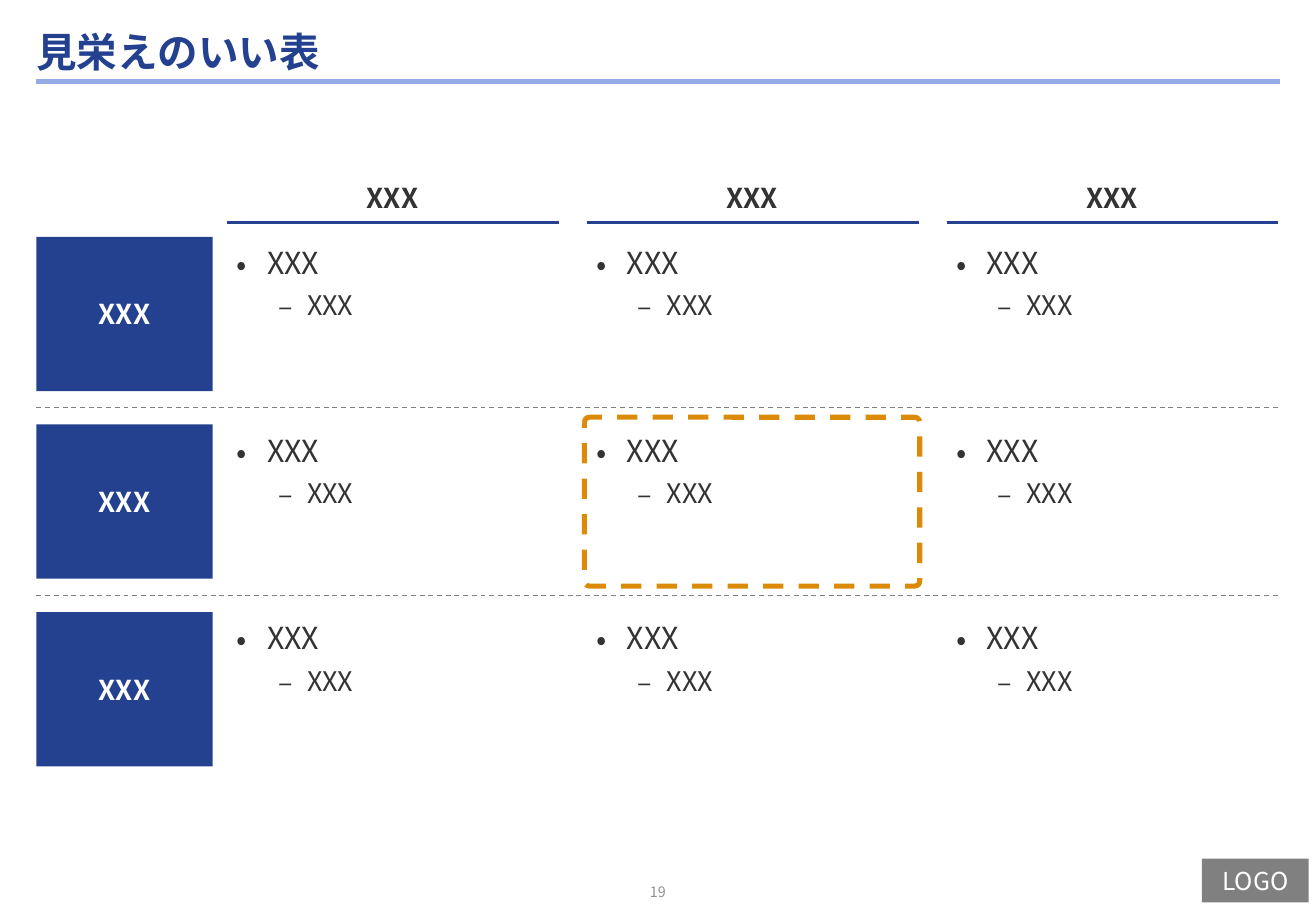
from dataclasses import dataclass

from lxml.etree import SubElement
from pptx import Presentation
from pptx.dml.color import RGBColor
from pptx.enum.dml import MSO_LINE as Dash
from pptx.enum.shapes import MSO_CONNECTOR as Connector, MSO_SHAPE as Shape
from pptx.enum.text import MSO_ANCHOR as Anchor, PP_ALIGN as Align
from pptx.oxml.ns import qn
from pptx.util import Inches, Pt


@dataclass(frozen=True)
class Theme:
    font: str = "Noto Sans CJK JP"
    navy: str = "244190"
    sky: str = "95ABE5"
    orange: str = "DB8B08"
    grey: str = "808080"
    pale: str = "909090"
    ink: str = "333333"
    white: str = "FFFFFF"
    title: float = 24
    label: float = 16.2
    item: float = 18
    subitem: float = 16
    logo: float = 14.6
    number: float = 8.5


THEME = Theme()
LEFT, RIGHT = 0.3, 10.53
COLUMN_LEFT, COLUMN_STEP, COLUMN_WIDTH = 1.85, 2.96, 2.76
ROW_TOP, ROW_STEP, ROW_HEIGHT = 1.95, 1.545, 1.27
HEADERS = ["XXX", "XXX", "XXX"]
ROWS = [("XXX", [("XXX", "XXX")] * 3)] * 3


def color(value):
    return RGBColor.from_string(value)


def inches(*lengths):
    return [Inches(length) for length in lengths]


def add_span(para, text, size, ink, bold=False):
    span = para.add_run()
    span.text = text
    span.font.name = THEME.font
    span.font.size = Pt(size)
    span.font.bold = bold
    span.font.color.rgb = color(ink)
    SubElement(span.font._element, qn("a:ea"), typeface=THEME.font)


def add_line(page, start, end, y, ink, width, dash=None):
    line = page.shapes.add_connector(Connector.STRAIGHT, *inches(start, y, end, y))
    line.line.color.rgb = color(ink)
    line.line.width = Pt(width)
    if dash:
        line.line.dash_style = dash
    SubElement(line._element.spPr, qn("a:effectLst"))


def add_block(page, place, text, fill, size, ink, bold=True, anchor=Anchor.MIDDLE):
    block = page.shapes.add_shape(Shape.RECTANGLE, *inches(*place))
    block.shadow.inherit = False
    block.fill.solid()
    block.fill.fore_color.rgb = color(fill)
    block.line.fill.background()
    block.text_frame.vertical_anchor = anchor
    para = block.text_frame.paragraphs[0]
    para.alignment = Align.CENTER
    add_span(para, text, size, ink, bold)


def add_header(page, left, text):
    add_block(page, (left, 1.44, COLUMN_WIDTH, 0.37), text,
              THEME.white, THEME.label, THEME.ink, anchor=Anchor.BOTTOM)
    add_line(page, left + 0.02, left + COLUMN_WIDTH - 0.01, 1.83, THEME.navy, 2)


def add_bullet(para, text, level, mark, margin, hanging, before, size):
    para.level = level
    para.space_before = Pt(before)
    properties = para._p.get_or_add_pPr()
    properties.set("marL", str(Inches(margin)))
    properties.set("indent", str(-Inches(hanging)))
    SubElement(properties, qn("a:buFont"), typeface=THEME.font)
    SubElement(properties, qn("a:buChar"), char=mark)
    add_span(para, text, size, THEME.ink)


def add_cell(page, left, top, item, subitem):
    box = page.shapes.add_textbox(*inches(left, top, COLUMN_WIDTH, 1.26))
    frame = box.text_frame
    frame.word_wrap = True
    add_bullet(frame.paragraphs[0], item, 0, "•", 0.25, 0.25, 10, THEME.item)
    add_bullet(frame.add_paragraph(), subitem, 1, "–", 0.58, 0.24, 5, THEME.subitem)


def add_highlight(page, left, top):
    frame = page.shapes.add_shape(Shape.ROUNDED_RECTANGLE,
                                  *inches(left, top, COLUMN_WIDTH, 1.39))
    frame.shadow.inherit = False
    frame.adjustments[0] = 0.03
    frame.fill.background()
    frame.line.color.rgb = color(THEME.orange)
    frame.line.width = Pt(3)
    frame.line.dash_style = Dash.DASH


def set_title(page, text):
    title = page.shapes.title
    title.left, title.top, title.width, title.height = inches(LEFT, 0.25, 10.24, 0.39)
    frame = title.text_frame
    frame.margin_left = frame.margin_top = frame.margin_bottom = 0
    frame.vertical_anchor = Anchor.MIDDLE
    para = frame.paragraphs[0]
    para.alignment = Align.LEFT
    para.line_spacing = 0.9
    add_span(para, text, THEME.title, THEME.navy, True)


def add_page_number(page, text):
    box = page.shapes.add_textbox(*inches(5.1, 7.24, 0.63, 0.21))
    frame = box.text_frame
    frame.word_wrap = True
    frame.margin_left = frame.margin_right = frame.margin_top = frame.margin_bottom = 0
    frame.vertical_anchor = Anchor.MIDDLE
    para = frame.paragraphs[0]
    para.alignment = Align.CENTER
    add_span(para, text, THEME.number, THEME.pale)


def main():
    deck = Presentation()
    deck.slide_width, deck.slide_height = inches(10.83, 7.5)
    page = deck.slides.add_slide(deck.slide_layouts[5])

    set_title(page, "見栄えのいい表")
    add_line(page, LEFT, RIGHT, 0.67, THEME.sky, 3)
    add_block(page, (9.89, 7.07, 0.88, 0.36), "LOGO",
              THEME.grey, THEME.logo, THEME.white, bold=False)
    add_page_number(page, "19")

    lefts = [COLUMN_LEFT + COLUMN_STEP * column for column in range(len(HEADERS))]
    tops = [ROW_TOP + ROW_STEP * row for row in range(len(ROWS))]
    for left, text in zip(lefts, HEADERS):
        add_header(page, left, text)
    for top, (label, cells) in zip(tops, ROWS):
        add_block(page, (LEFT, top, 1.45, ROW_HEIGHT), label,
                  THEME.navy, THEME.label, THEME.white)
        for left, (item, subitem) in zip(lefts, cells):
            add_cell(page, left, top + 0.01, item, subitem)
    for top in tops[1:]:
        add_line(page, LEFT, RIGHT, top - 0.14, THEME.grey, 0.75, Dash.DASH)
    add_highlight(page, lefts[1], tops[1] - 0.06)

    deck.save("out.pptx")


if __name__ == "__main__":
    main()
